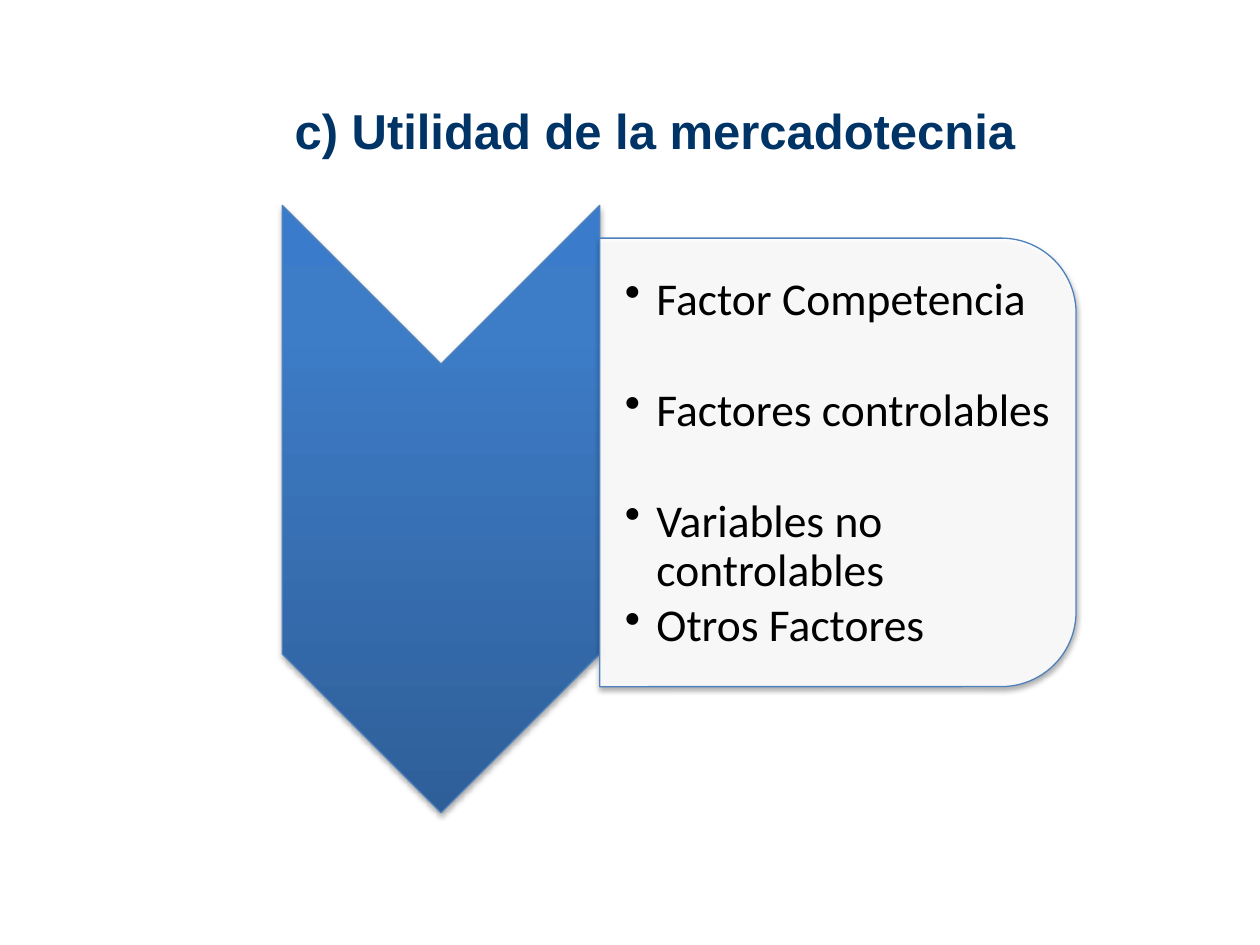
import pptx
import pptx.dml.color
import pptx.enum.shapes
import pptx.enum.text
import pptx.oxml
import pptx.oxml.ns
import pptx.util
from pptx.util import Inches

RGBColor = pptx.dml.color.RGBColor
NAVY = RGBColor(0x00, 0x33, 0x66)
BLUE = RGBColor(0x4F, 0x81, 0xBD)
WHITE = RGBColor(0xFF, 0xFF, 0xFF)
BLACK = RGBColor(0x00, 0x00, 0x00)
ARROW_STOPS = [
    (0, RGBColor(0x2F, 0x5F, 0x99)),
    (80, RGBColor(0x3D, 0x7C, 0xC7)),
    (100, RGBColor(0x3A, 0x7C, 0xCB)),
]

# Each factor with the space after it, in points
FACTORS = [
    ("Factor Competencia", 35.5),
    ("Factores controlables", 35.5),
    ("Variables no controlables", 3.5),
    ("Otros Factores", 3.5),
]
NS = pptx.oxml.ns.nsdecls("a")
qn = pptx.oxml.ns.qn


def set_format(target, values):
    for name, value in values.items():
        setattr(target, name, value)


def add_turned_shape(slide, kind, left, top, width, height):
    """Preset shape turned a quarter, with a thin outline and a soft shadow."""
    s = slide.shapes.add_shape(
        kind, Inches(left), Inches(top), Inches(width), Inches(height))
    s.rotation = 90
    s.fill.solid()
    s.fill.fore_color.rgb = WHITE
    s.line.color.rgb = BLUE
    s.line.width = pptx.util.Pt(0.75)
    s.shadow.inherit = False
    s._element.spPr.find(qn("a:effectLst")).append(pptx.oxml.parse_xml(
        f'<a:outerShdw {NS} blurRad="{pptx.util.Pt(3.1)}" '
        f'dist="{pptx.util.Pt(1.8)}" dir="5400000" rotWithShape="0">'
        '<a:srgbClr val="000000"><a:alpha val="35000"/></a:srgbClr>'
        '</a:outerShdw>'))
    return s


def set_gradient(s, stops):
    """Gradient from bottom to top that ignores the rotation of the shape."""
    marks = "".join(
        f'<a:gs pos="{pos * 1000}"><a:srgbClr val="{color}"/></a:gs>'
        for pos, color in stops)
    spPr = s._element.spPr
    spPr.replace(spPr.find(qn("a:solidFill")), pptx.oxml.parse_xml(
        f'<a:gradFill {NS} rotWithShape="0"><a:gsLst>{marks}</a:gsLst>'
        '<a:lin ang="16200000" scaled="0"/></a:gradFill>'))


def set_opacity(s, percent):
    color = s._element.spPr.find(qn("a:solidFill"))[0]
    color.append(pptx.oxml.parse_xml(
        f'<a:alpha {NS} val="{percent * 1000}"/>'))


def add_text_frame(slide, left, top, width, height):
    tf = slide.shapes.add_textbox(
        Inches(left), Inches(top), Inches(width), Inches(height)).text_frame
    tf.word_wrap = True
    return tf


def add_text(p, text, size, font, color, bold=False):
    r = p.add_run()
    r.text = text
    set_format(r.font, {"size": pptx.util.Pt(size), "name": font, "bold": bold})
    r.font.color.rgb = color


def add_bullet(p, indent):
    pPr = p._p.get_or_add_pPr()
    pPr.set("marL", str(Inches(indent)))
    pPr.set("indent", str(-Inches(indent)))
    pPr.append(pptx.oxml.parse_xml(f'<a:buChar {NS} char="•"/>'))


def add_factor_list(slide):
    tf = add_text_frame(slide, 4.76, 2.07, 3.61, 3.22)
    edge = Inches(0.02)
    set_format(tf, {
        "margin_left": Inches(0.2), "margin_right": edge,
        "margin_top": edge, "margin_bottom": edge,
        "vertical_anchor": pptx.enum.text.MSO_ANCHOR.MIDDLE})
    for i, (text, gap) in enumerate(FACTORS):
        p = tf.paragraphs[0] if i == 0 else tf.add_paragraph()
        add_bullet(p, 0.25)
        set_format(p, {"level": 1, "line_spacing": 0.9,
                       "space_after": pptx.util.Pt(gap)})
        add_text(p, text, 26, "Calibri", BLACK)


def main():
    prs = pptx.Presentation()
    prs.slide_width, prs.slide_height = Inches(10), Inches(7.5)
    slide = prs.slides.add_slide(prs.slide_layouts[6])
    kinds = pptx.enum.shapes.MSO_SHAPE

    # Downward arrow
    arrow = add_turned_shape(slide, kinds.CHEVRON, 1.09, 2.78, 4.82, 2.52)
    set_gradient(arrow, ARROW_STOPS)

    # Panel with the list of factors
    panel = add_turned_shape(
        slide, kinds.ROUND_2_SAME_RECTANGLE, 4.87, 1.78, 3.56, 3.78)
    set_opacity(panel, 90)
    add_factor_list(slide)

    # Title
    p = add_text_frame(slide, 2.24, 0.75, 6.54, 0.72).paragraphs[0]
    p.alignment = pptx.enum.text.PP_ALIGN.JUSTIFY
    add_text(p, "c) Utilidad de la mercadotecnia", 28, "Arial", NAVY, bold=True)

    prs.save("out.pptx")


if __name__ == "__main__":
    main()
